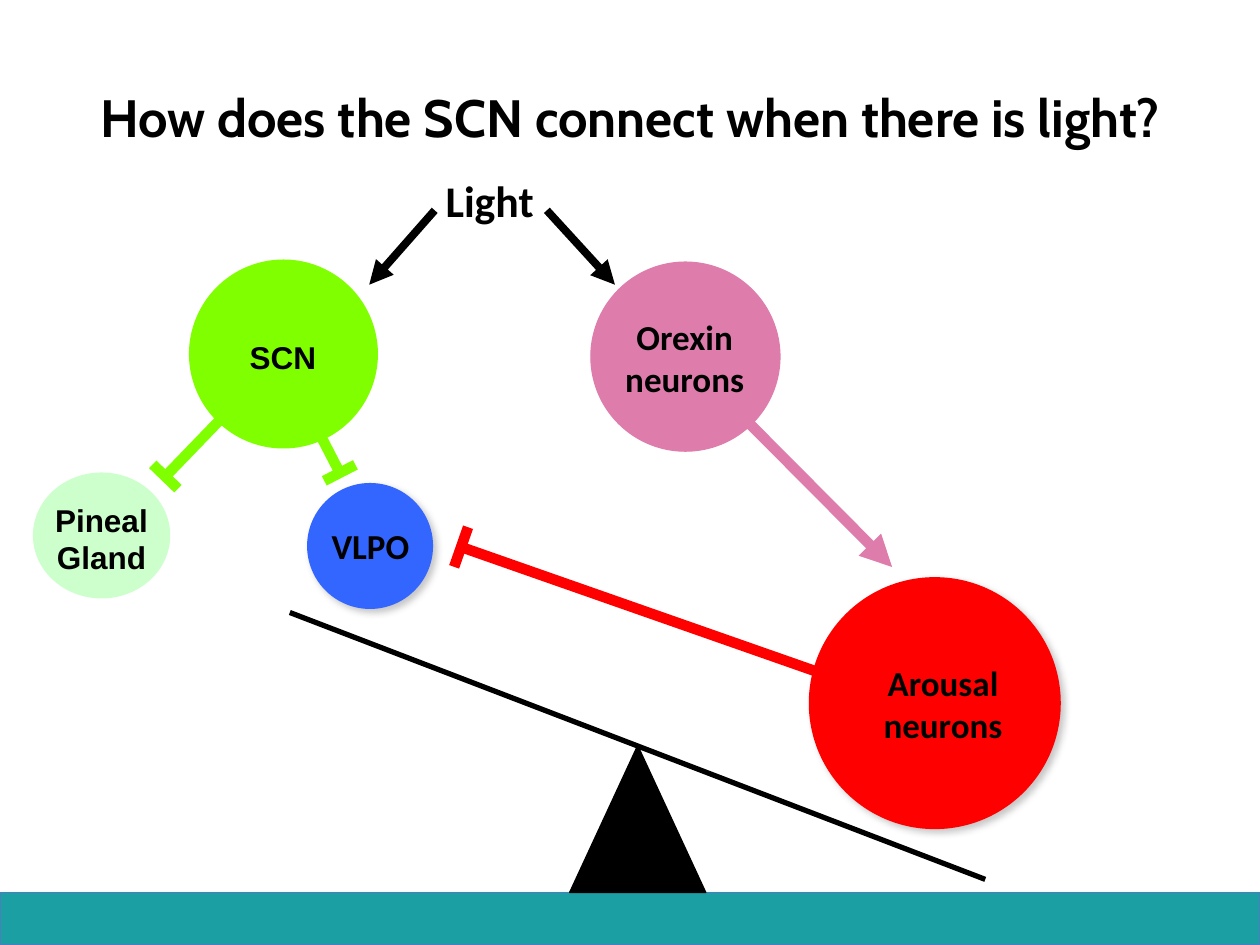
from math import hypot

from lxml.etree import SubElement
from pptx import Presentation
from pptx.dml.color import RGBColor
from pptx.enum.shapes import MSO_CONNECTOR, MSO_SHAPE
from pptx.enum.text import MSO_ANCHOR, PP_ALIGN
from pptx.oxml.ns import qn
from pptx.util import Pt

BLACK = RGBColor(0x00, 0x00, 0x00)
TEAL = RGBColor(0x1C, 0x9F, 0xA3)
EDGE_BLUE = RGBColor(0x4B, 0x7E, 0xBC)
GREEN = RGBColor(0x80, 0xFF, 0x00)
PALE_GREEN = RGBColor(0xCC, 0xFF, 0xCC)
PINK = RGBColor(0xDE, 0x7C, 0xAC)
RED = RGBColor(0xFF, 0x00, 0x00)
BLUE = RGBColor(0x33, 0x66, 0xFF)
GREY = RGBColor(0x80, 0x80, 0x80)

# Shadows: colour, opacity %, blur, distance, angle
BAND_SHADOW = (BLACK, 35, 3.1, 1.8, 90)
BALL_SHADOW = (GREY, 43, 4, 3, 45)


class Diagram:
    """Draws elements on the current slide; lengths are in points."""

    text_format = {"bold": True, "size": Pt(20), "name": "Calibri"}

    def __init__(self, slide):
        self.s = slide

    def shadow(self, sp, color, opacity, blur, dist, angle):
        effects = sp._element.spPr.find(qn("a:effectLst"))
        shade = SubElement(effects, qn("a:outerShdw"), blurRad=str(Pt(blur)),
                           dist=str(Pt(dist)), dir=str(angle * 60000),
                           rotWithShape="0")
        clr = SubElement(shade, qn("a:srgbClr"), val=str(color))
        SubElement(clr, qn("a:alpha"), val=str(opacity * 1000))

    def shape(self, kind, box, fill, line=None, shadow=None):
        sp = self.s.shapes.add_shape(kind, *map(Pt, box))
        sp.shadow.inherit = False
        sp.fill.solid()
        sp.fill.fore_color.rgb = fill
        if line is None:
            sp.line.fill.background()
        else:
            sp.line.color.rgb = line
            sp.line.width = Pt(0.75)
        if shadow:
            self.shadow(sp, *shadow)

    def line(self, start, end, color, width, arrow=False):
        c = self.s.shapes.add_connector(
            MSO_CONNECTOR.STRAIGHT, *map(Pt, (*start, *end)))
        c.line.color.rgb = color
        c.line.width = Pt(width)
        if arrow:
            SubElement(c.line._get_or_add_ln(), qn("a:tailEnd"),
                       type="triangle")
        SubElement(c._element.spPr, qn("a:effectLst"))

    def inhibition(self, start, end, color, half_bar):
        """A stem that ends in a bar at right angles to it."""
        self.line(start, end, color, 6)
        (x1, y1), (x2, y2) = start, end
        k = half_bar / hypot(x2 - x1, y2 - y1)
        dx, dy = k * (y2 - y1), k * (x1 - x2)
        self.line((x2 - dx, y2 - dy), (x2 + dx, y2 + dy), color, 6)

    def text(self, box, *lines, wrap=False, **changes):
        tf = self.s.shapes.add_textbox(*map(Pt, box)).text_frame
        tf.word_wrap = wrap
        tf.vertical_anchor = MSO_ANCHOR.MIDDLE
        for i, line in enumerate(lines):
            p = tf.add_paragraph() if i else tf.paragraphs[0]
            p.alignment = PP_ALIGN.CENTER
            r = p.add_run()
            r.text = line
            r.font.color.rgb = BLACK
            for key, value in {**self.text_format, **changes}.items():
                setattr(r.font, key, value)


def main():
    prs = Presentation()
    prs.slide_width, prs.slide_height = Pt(720), Pt(540)
    d = Diagram(prs.slides.add_slide(prs.slide_layouts[6]))

    # Ground band and title
    d.shape(MSO_SHAPE.RECTANGLE, (0, 509.8, 720, 30.2), TEAL, EDGE_BLUE,
            BAND_SHADOW)
    d.text((0, 21.6, 720, 90),
           "How does the SCN connect when there is light?",
           wrap=True, name="Cabin", size=Pt(30))

    # Seesaw
    d.line((165.6, 350), (563, 502.5), BLACK, 3)
    d.shape(MSO_SHAPE.ISOSCELES_TRIANGLE, (325.5, 426, 77.8, 84), BLACK, BLACK)

    # Inhibiting connections, their inner ends hidden by the circles
    d.inhibition((136.8, 159), (194.2, 270.2), GREEN, 10)
    d.inhibition((181.4, 182.2), (94.5, 272.3), GREEN, 10)
    d.inhibition((481, 388.8), (263.5, 312.6), RED, 12)

    # Circles
    for box, fill, line, shadow in [
        ((337.7, 149.8, 108, 108), PINK, PINK, None),
        ((462.2, 329.8, 144, 144), RED, None, BALL_SHADOW),
        ((175.5, 276, 72, 72), BLUE, None, BALL_SHADOW),
        ((108, 148.3, 108, 108), GREEN, None, None),
        ((18.8, 270, 78.5, 72), PALE_GREEN, None, None),
    ]:
        d.shape(MSO_SHAPE.OVAL, box, fill, line, shadow)

    # Activating arrows
    d.line((248.4, 120.2), (211, 162.7), BLACK, 4.5, arrow=True)
    d.line((312.5, 120.2), (351.4, 162.7), BLACK, 4.5, arrow=True)
    d.line((397.4, 211), (509.8, 324), PINK, 6, arrow=True)

    # Labels
    arial = {"name": "Arial", "size": Pt(18)}
    d.text((247, 95.8, 65.5, 37.4), "Light", size=Pt(25))
    d.text((349.2, 176.4, 84.2, 55.4), "Orexin neurons", wrap=True)
    d.text((496.8, 374.4, 84.2, 55.4), "Arousal", "neurons")
    d.text((182.2, 296, 59, 31.7), "VLPO")
    d.text((135.4, 189.4, 52.6, 28.8), "SCN", **arial)
    d.text((18, 282.2, 80, 51), "Pineal Gland", wrap=True, **arial)

    prs.save("out.pptx")


if __name__ == "__main__":
    main()
